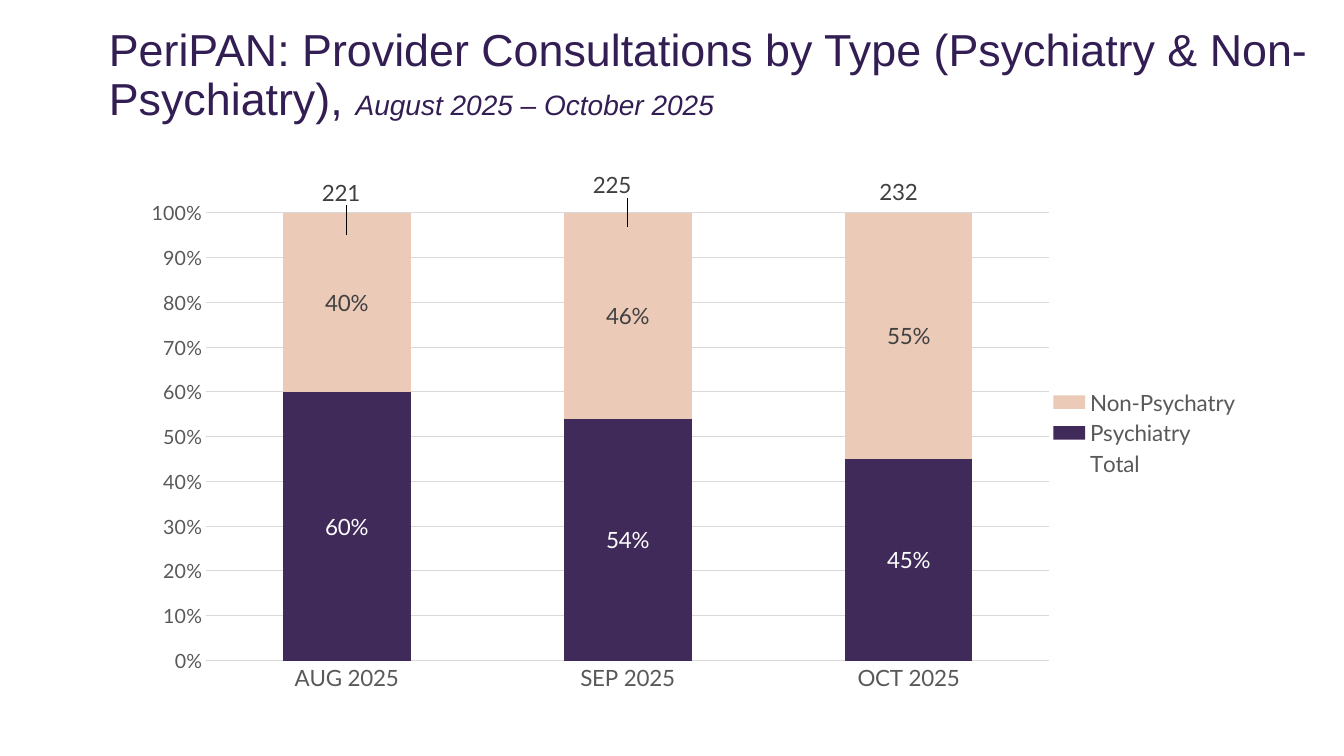
from lxml.etree import SubElement
from pptx import Presentation
from pptx.chart.data import CategoryChartData
from pptx.dml.color import RGBColor
from pptx.enum.chart import XL_CHART_TYPE, XL_LABEL_POSITION, XL_LEGEND_POSITION
from pptx.enum.chart import XL_MARKER_STYLE, XL_TICK_LABEL_POSITION, XL_TICK_MARK
from pptx.enum.text import MSO_ANCHOR, MSO_AUTO_SIZE, PP_ALIGN
from pptx.oxml import parse_xml
from pptx.oxml.ns import nsdecls, qn
from pptx.util import Pt

COLORS = {
    "title": "331E54", "psychiatry": "402A59", "non_psychiatry": "EBCAB8",
    "total": "A5A5A5", "axis_text": "595959", "label": "404040",
    "white": "FFFFFF", "grid": "D9D9D9",
}
HEADING = "PeriPAN: Provider Consultations by Type (Psychiatry & Non-Psychiatry), "
PERIOD = "August 2025 – October 2025"
MONTHS = ["AUG 2025", "SEP 2025", "OCT 2025"]
# name, shares, bar colour, label colour
SHARES = [
    ("Psychiatry", (0.60, 0.54, 0.45), "psychiatry", "white"),
    ("Non-Psychatry", (0.40, 0.46, 0.55), "non_psychiatry", "label"),
]
TOTALS = (221, 225, 232)
# Shift of each total's label, as fractions of the chart's width and height
TOTAL_SHIFTS = [(-0.005, -0.044), (-0.014, -0.044), (-0.009, -0.007)]
PLOT_AREA = {"x": 0.068, "y": 0.101, "w": 0.752, "h": 0.812}
TITLE_BOX = (70.56, 16.56, 888.48, 52.56)
CHART_BOX = (92.88, 112.32, 800.64, 393.84)


def color(name):
    return RGBColor.from_string(COLORS[name])


def format_font(font, size=16, ink="axis_text", face="Lato", italic=False):
    font.size = Pt(size)
    font.name = face
    font.italic = italic
    font.bold = False
    font.color.rgb = color(ink)


def add_text(paragraph, text, **style):
    run = paragraph.add_run()
    run.text = text
    format_font(run.font, **style)


def manual_layout(**settings):
    layout = parse_xml(f"<c:layout {nsdecls('c')}><c:manualLayout/></c:layout>")
    for tag, value in settings.items():
        SubElement(layout[0], qn(f"c:{tag}")).set("val", str(value))
    return layout


def move_totals_to_line(chart):
    """Turn the last bar series into a line on a hidden right-hand axis."""
    plot_area = chart._chartSpace.chart.plotArea
    bars = plot_area.find(qn("c:barChart"))
    totals = bars.findall(qn("c:ser"))[-1]
    for flag in totals.findall(qn("c:invertIfNegative")):
        totals.remove(flag)
    line = parse_xml(
        f'<c:lineChart {nsdecls("c")}><c:grouping val="standard"/><c:varyColors val="0"/>'
        '<c:marker val="1"/><c:axId val="5001"/><c:axId val="5002"/></c:lineChart>')
    line.insert(2, totals)
    bars.addnext(line)
    right_axis = parse_xml(
        f'<c:valAx {nsdecls("c", "a")}><c:axId val="5002"/><c:scaling>'
        '<c:orientation val="minMax"/><c:max val="232"/><c:min val="0"/></c:scaling>'
        '<c:delete val="0"/><c:axPos val="r"/><c:numFmt formatCode="General" sourceLinked="1"/>'
        '<c:majorTickMark val="none"/><c:minorTickMark val="none"/><c:tickLblPos val="none"/>'
        '<c:spPr><a:ln><a:noFill/></a:ln></c:spPr>'
        '<c:crossAx val="5001"/><c:crosses val="max"/></c:valAx>')
    hidden_months = parse_xml(
        f'<c:catAx {nsdecls("c")}><c:axId val="5001"/><c:scaling>'
        '<c:orientation val="minMax"/></c:scaling><c:delete val="1"/><c:axPos val="b"/>'
        '<c:crossAx val="5002"/><c:crosses val="autoZero"/></c:catAx>')
    plot_area.findall(qn("c:valAx"))[-1].addnext(right_axis)
    right_axis.addnext(hidden_months)
    for layout in plot_area.findall(qn("c:layout")):
        plot_area.remove(layout)
    plot_area.insert(0, manual_layout(
        layoutTarget="inner", xMode="edge", yMode="edge", **PLOT_AREA))


def format_axes(chart):
    months, percent = chart.category_axis, chart.value_axis
    for axis, size in ((months, 16), (percent, 14)):
        axis.major_tick_mark = axis.minor_tick_mark = XL_TICK_MARK.NONE
        axis.tick_label_position = XL_TICK_LABEL_POSITION.NEXT_TO_AXIS
        format_font(axis.tick_labels.font, size=size)
    percent.minimum_scale, percent.maximum_scale = 0, 1
    percent.major_unit = 0.1
    percent.tick_labels.number_format = "0%"
    percent.tick_labels.number_format_is_linked = False
    percent.format.line.fill.background()
    percent.has_major_gridlines = True
    for line in (months.format.line, percent.major_gridlines.format.line):
        line.color.rgb = color("grid")
        line.width = Pt(0.75)


def format_series(chart):
    bars, line = chart.plots
    bars.gap_width, bars.overlap = 120, 100
    bars.vary_by_categories = False
    for series, (_, _, fill, ink) in zip(bars.series, SHARES):
        series.format.fill.solid()
        series.format.fill.fore_color.rgb = color(fill)
        labels = series.data_labels
        labels.show_value = True
        labels.number_format = "0%"
        labels.number_format_is_linked = False
        format_font(labels.font, ink=ink)

    totals = line.series[0]
    totals.smooth = False
    totals.format.line.color.rgb = color("total")
    totals.format.line.width = Pt(2.25)
    line_color = totals._element.find(f".//{qn('a:ln')}//{qn('a:srgbClr')}")
    SubElement(line_color, qn("a:alpha")).set("val", "0")
    totals.marker.style = XL_MARKER_STYLE.NONE
    totals.data_labels.show_value = True
    totals.data_labels.position = XL_LABEL_POSITION.ABOVE
    format_font(totals.data_labels.font, ink="label")
    for month, _ in enumerate(MONTHS):
        label = totals.points[month].data_label
        format_font(label.font, ink="label")
        label.position = XL_LABEL_POSITION.ABOVE
    label_nodes = totals.data_labels._element.findall(qn("c:dLbl"))
    for node, (dx, dy) in zip(label_nodes, TOTAL_SHIFTS):
        node.find(qn("c:idx")).addnext(manual_layout(x=dx, y=dy))


def add_consultation_chart(slide):
    data = CategoryChartData()
    data.categories = MONTHS
    for name, shares, _, _ in SHARES:
        data.add_series(name, shares, number_format="0%")
    data.add_series("Total", TOTALS, number_format="General")
    chart = slide.shapes.add_chart(
        XL_CHART_TYPE.COLUMN_STACKED_100, *map(Pt, CHART_BOX), data).chart
    chart.has_title = False
    format_font(chart.font, size=10, face="Calibri")
    chart.has_legend = True
    chart.legend.position = XL_LEGEND_POSITION.RIGHT
    chart.legend.include_in_layout = False
    format_font(chart.legend.font)
    format_axes(chart)
    move_totals_to_line(chart)
    format_series(chart)


def add_title(slide):
    title = slide.shapes.title
    title.left, title.top, title.width, title.height = map(Pt, TITLE_BOX)
    frame = title.text_frame
    frame.word_wrap = True
    frame.auto_size = MSO_AUTO_SIZE.NONE
    frame.vertical_anchor = MSO_ANCHOR.TOP
    paragraph = frame.paragraphs[0]
    paragraph.alignment = PP_ALIGN.LEFT
    paragraph.line_spacing = 0.9
    add_text(paragraph, HEADING, size=32, ink="title", face="Arial")
    add_text(paragraph, PERIOD, size=20, ink="title", face="Arial", italic=True)


def main():
    deck = Presentation()
    deck.slide_width, deck.slide_height = Pt(960), Pt(540)
    slide = deck.slides.add_slide(deck.slide_layouts[5])
    add_consultation_chart(slide)
    add_title(slide)
    deck.save("out.pptx")


if __name__ == "__main__":
    main()
